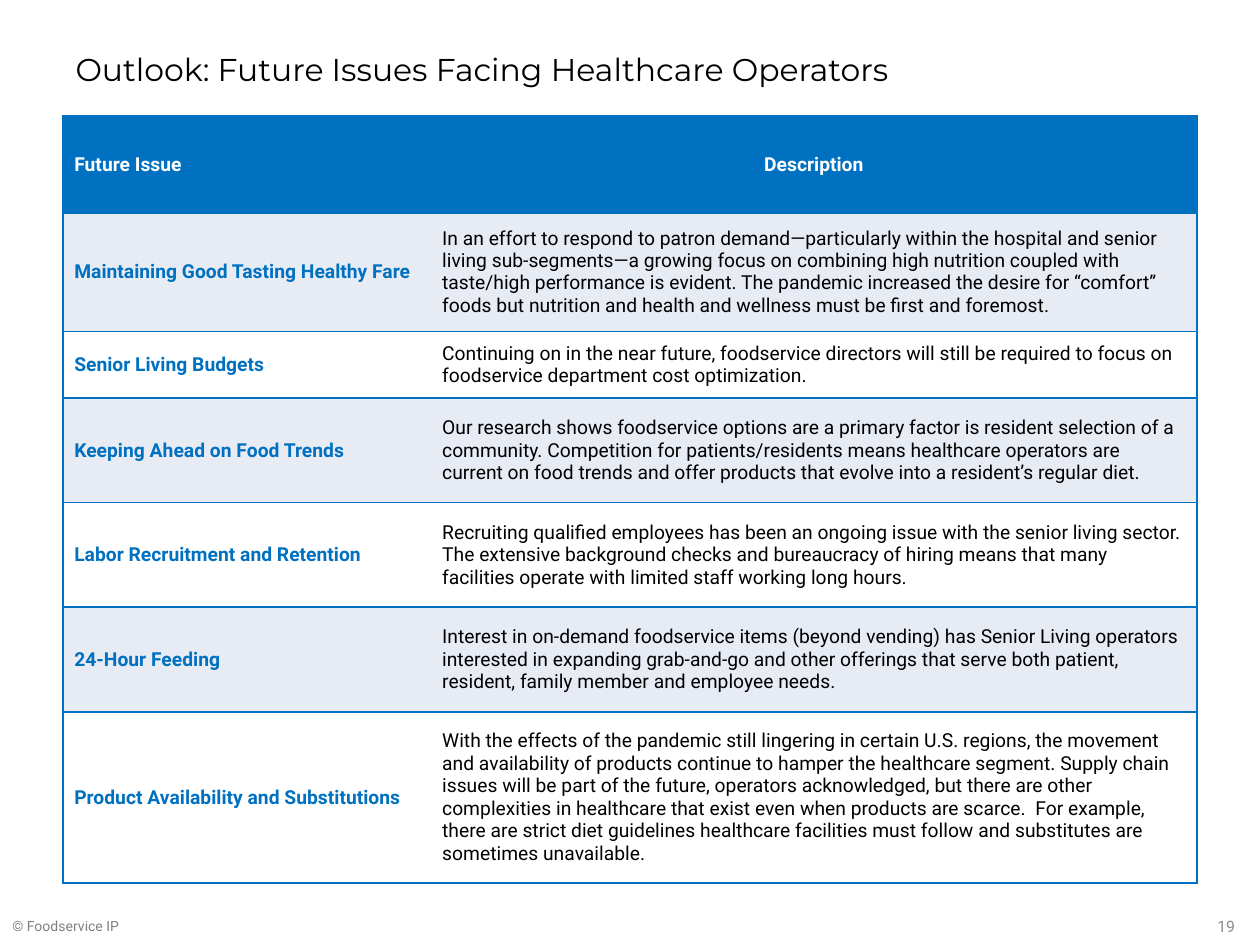
from dataclasses import dataclass
from typing import NamedTuple

from lxml import etree
from pptx import Presentation
from pptx.dml.color import RGBColor
from pptx.enum.text import MSO_ANCHOR, MSO_AUTO_SIZE, PP_ALIGN
from pptx.oxml.ns import qn
from pptx.util import Inches, Pt

LEFT, CENTER, RIGHT = PP_ALIGN.LEFT, PP_ALIGN.CENTER, PP_ALIGN.RIGHT
MIDDLE, BOTTOM = MSO_ANCHOR.MIDDLE, MSO_ANCHOR.BOTTOM
NO_AUTOFIT = MSO_AUTO_SIZE.NONE
TITLE_ONLY = 5


@dataclass(frozen=True)
class Theme:
    blue: str = "0070C0"
    band: str = "E7EBF4"
    white: str = "FFFFFF"
    black: str = "000000"
    footer_gray: str = "808080"
    number_gray: str = "8C8C8C"
    title_font: str = "Montserrat"
    body_font: str = "Roboto"
    title_size: float = 18
    table_size: float = 11
    footer_size: float = 8
    number_size: float = 9
    border_width: float = 1


THEME = Theme()


class Box(NamedTuple):
    left: float
    top: float
    width: float
    height: float

    def lengths(self) -> list:
        return [Inches(value) for value in self]


class TextStyle(NamedTuple):
    size: float
    color: str
    font: str = THEME.body_font
    bold: bool = False
    align: PP_ALIGN = LEFT


class Issue(NamedTuple):
    name: str
    description: str
    height: float


TITLE_BOX = Box(0.5, 0.3, 9, 0.49)
TABLE_BOX = Box(0.5, 0.92, 9, 6.09)
FOOTER_BOX = Box(0, 7.07, 2.3, 0.39)
NUMBER_BOX = Box(7.17, 7.15, 2.73, 0.4)
COLUMN_WIDTHS = (2.92, 6.08)

HEADER = Issue("Future Issue", "Description", 0.77)
ISSUES = [
    Issue(
        "Maintaining Good Tasting Healthy Fare",
        "In an effort to respond to patron demand—particularly within the hospital and senior "
        "living sub-segments—a growing focus on combining high nutrition coupled with "
        "taste/high performance is evident. The pandemic increased the desire for “comfort” "
        "foods but nutrition and health and wellness must be first and foremost.",
        0.94,
    ),
    Issue(
        "Senior Living Budgets",
        "Continuing on in the near future, foodservice directors will still be required to "
        "focus on foodservice department cost optimization.",
        0.53,
    ),
    Issue(
        "Keeping Ahead on Food Trends",
        "Our research shows foodservice options are a primary factor is resident selection of "
        "a community. Competition for patients/residents means healthcare operators are "
        "current on food trends and offer products that evolve into a resident’s regular diet.",
        0.83,
    ),
    Issue(
        "Labor Recruitment and Retention",
        "Recruiting qualified employees has been an ongoing issue with the senior living "
        "sector. The extensive background checks and bureaucracy of hiring means that many "
        "facilities operate with limited staff working long hours.",
        0.83,
    ),
    Issue(
        "24-Hour Feeding",
        "Interest in on-demand foodservice items (beyond vending) has Senior Living operators "
        "interested in expanding grab-and-go and other offerings that serve both patient, "
        "resident, family member and employee needs.",
        0.83,
    ),
    Issue(
        "Product Availability and Substitutions",
        "With the effects of the pandemic still lingering in certain U.S. regions, the "
        "movement and availability of products continue to hamper the healthcare segment. "
        "Supply chain issues will be part of the future, operators acknowledged, but there "
        "are other complexities in healthcare that exist even when products are scarce.  For "
        "example, there are strict diet guidelines healthcare facilities must follow and "
        "substitutes are sometimes unavailable.",
        1.36,
    ),
]


def write_text(frame, text: str, style: TextStyle) -> None:
    frame.text = text
    para = frame.paragraphs[0]
    para.alignment = style.align
    para.font.name = style.font
    para.font.size = Pt(style.size)
    para.font.bold = style.bold
    para.font.color.rgb = RGBColor.from_string(style.color)


def add_title(slide, text: str) -> None:
    title = slide.shapes.title
    title.left, title.top, title.width, title.height = TITLE_BOX.lengths()
    frame = title.text_frame
    frame.auto_size = NO_AUTOFIT
    frame.vertical_anchor = MIDDLE
    write_text(frame, text, TextStyle(THEME.title_size, THEME.black, THEME.title_font))


def add_label(slide, box: Box, text: str, style: TextStyle, anchor: MSO_ANCHOR) -> None:
    frame = slide.shapes.add_textbox(*box.lengths()).text_frame
    frame.word_wrap = True
    frame.vertical_anchor = anchor
    write_text(frame, text, style)


def set_borders(cell, open_side: str) -> None:
    properties = cell._tc.get_or_add_tcPr()
    for side in ("lnL", "lnR", "lnT", "lnB"):
        line = etree.SubElement(properties, qn(f"a:{side}"), w=str(Pt(THEME.border_width)))
        if side == open_side:
            etree.SubElement(line, qn("a:noFill"))
        else:
            fill = etree.SubElement(line, qn("a:solidFill"))
            etree.SubElement(fill, qn("a:srgbClr"), val=THEME.blue)


def fill_cell(cell, text: str, style: TextStyle, fill: str, open_side: str) -> None:
    set_borders(cell, open_side)
    cell.fill.solid()
    cell.fill.fore_color.rgb = RGBColor.from_string(fill)
    cell.vertical_anchor = MIDDLE
    cell.margin_left = cell.margin_right = Inches(0.09)
    cell.margin_top = cell.margin_bottom = Inches(0.05)
    write_text(cell.text_frame, text, style)


def add_issue_table(slide) -> None:
    rows = [HEADER, *ISSUES]
    shape = slide.shapes.add_table(len(rows), len(COLUMN_WIDTHS), *TABLE_BOX.lengths())
    table = shape.table
    for column, width in zip(table.columns, COLUMN_WIDTHS):
        column.width = Inches(width)
    size = THEME.table_size
    for index, issue in enumerate(rows):
        table.rows[index].height = Inches(issue.height)
        if index == 0:
            fill = THEME.blue
            name_style = TextStyle(size, THEME.white, bold=True)
            description_style = name_style._replace(align=CENTER)
        else:
            fill = THEME.band if index % 2 else THEME.white
            name_style = TextStyle(size, THEME.blue, bold=True)
            description_style = TextStyle(size, THEME.black)
        fill_cell(table.cell(index, 0), issue.name, name_style, fill, "lnR")
        fill_cell(table.cell(index, 1), issue.description, description_style, fill, "lnL")


def main() -> None:
    deck = Presentation()
    deck.slide_width, deck.slide_height = Inches(10), Inches(7.5)
    slide = deck.slides.add_slide(deck.slide_layouts[TITLE_ONLY])
    add_title(slide, "Outlook: Future Issues Facing Healthcare Operators")
    add_issue_table(slide)
    footer_style = TextStyle(THEME.footer_size, THEME.footer_gray)
    add_label(slide, FOOTER_BOX, "© Foodservice IP", footer_style, BOTTOM)
    number_style = TextStyle(THEME.number_size, THEME.number_gray, align=RIGHT)
    add_label(slide, NUMBER_BOX, "19", number_style, MIDDLE)
    deck.save("out.pptx")


if __name__ == "__main__":
    main()
